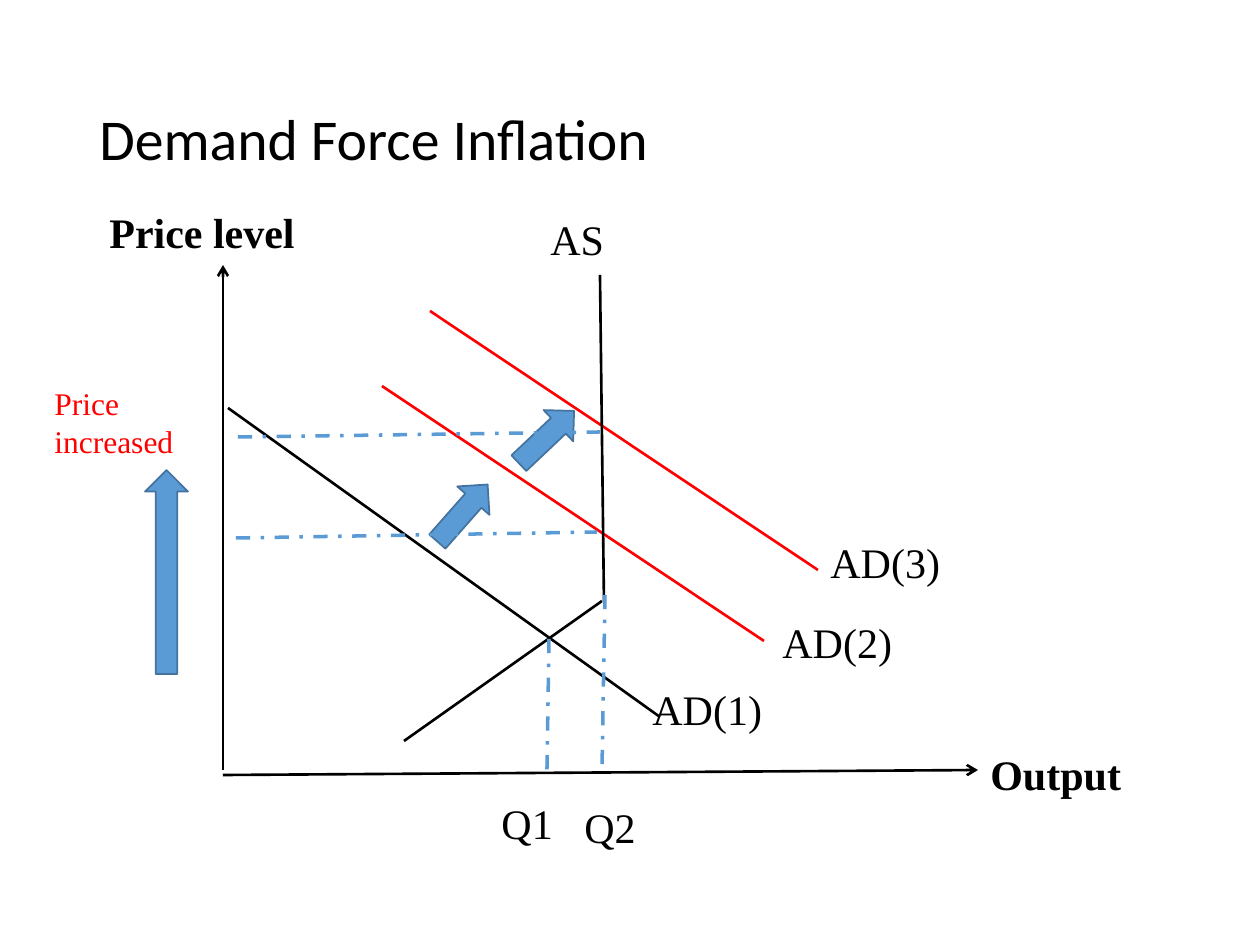
from lxml import etree
from pptx import Presentation
from pptx.dml.color import RGBColor
from pptx.enum.dml import MSO_LINE
from pptx.enum.shapes import MSO_CONNECTOR, MSO_SHAPE
from pptx.enum.text import MSO_ANCHOR
from pptx.oxml.ns import qn
from pptx.util import Emu, Pt

STRAIGHT = MSO_CONNECTOR.STRAIGHT
DOWN_ARROW = MSO_SHAPE.DOWN_ARROW
DASH_DOT = MSO_LINE.DASH_DOT
MIDDLE, TOP = MSO_ANCHOR.MIDDLE, MSO_ANCHOR.TOP
EMU_PER_PX = 914400 / 126
BLACK, RED, BLUE, DARK_BLUE = "000000", "FF0000", "5B9BD5", "43739E"

CURVES = [
    ((228, 408), (660, 717), BLACK),
    ((764, 641), (382, 386), RED),
    ((818, 570), (430, 311), RED),
    ((602, 601), (404, 741), BLACK),
    ((600, 275), (604, 601), BLACK),
]
GUIDES = [
    ((605, 595), (602, 770)),
    ((549, 639), (547, 770)),
    ((236, 538), (597, 532)),
    ((238, 437), (600, 432)),
]
LABELS = [
    ("AD(1)", (640, 677, 154, 64)),
    ("AD(2)", (770, 610, 154, 64)),
    ("AD(3)", (818, 530, 154, 64)),
    ("AS", (538, 207, 154, 64)),
    ("Q1", (489, 791, 97, 64)),
    ("Q2", (572, 795, 97, 64)),
]
SHIFT_ARROWS = [
    ((525, 399, 43, 76), 226.6),
    ((441, 475, 43, 76), 221.4),
    ((145, 470, 43, 204), 180),
]


def px(n):
    return Emu(round(n * EMU_PER_PX))


def color(value):
    return RGBColor.from_string(value)


def add_text(slide, text, box, size=24, font="Times New Roman", fill=BLACK,
             bold=False, anchor=TOP, spacing=None):
    tf = slide.shapes.add_textbox(*map(px, box)).text_frame
    tf.word_wrap = True
    tf.vertical_anchor = anchor
    for i, line in enumerate(text.split("\n")):
        p = tf.add_paragraph() if i else tf.paragraphs[0]
        p.line_spacing = spacing
        r = p.add_run()
        r.text = line
        r.font.size = Pt(size)
        r.font.name = font
        r.font.bold = bold
        r.font.color.rgb = color(fill)


def add_line(slide, start, end, fill=BLACK, width=1.5, dash=None, arrow=False):
    sp = slide.shapes.add_connector(STRAIGHT, *map(px, start + end))
    sp.line.color.rgb = color(fill)
    sp.line.width = Pt(width)
    if dash is not None:
        sp.line.dash_style = dash
    if arrow:
        etree.SubElement(sp.line._get_or_add_ln(), qn("a:tailEnd"), type="arrow")
    etree.SubElement(sp._element.spPr, qn("a:effectLst"))


def add_block_arrow(slide, box, rotation):
    sp = slide.shapes.add_shape(DOWN_ARROW, *map(px, box))
    sp.rotation = rotation
    sp.shadow.inherit = False
    sp.fill.solid()
    sp.fill.fore_color.rgb = color(BLUE)
    sp.line.color.rgb = color(DARK_BLUE)
    sp.line.width = Pt(1)


def main():
    prs = Presentation()
    prs.slide_width, prs.slide_height = px(1260), px(945)
    slide = prs.slides.add_slide(prs.slide_layouts[6])

    add_text(slide, "Demand Force Inflation", (87, 50, 1086, 183), size=33,
             font="Calibri", anchor=MIDDLE, spacing=0.9)
    add_line(slide, (223, 770), (223, 265), arrow=True)
    add_line(slide, (223, 775), (978, 770), arrow=True)
    for start, end, fill in CURVES:
        add_line(slide, start, end, fill)

    add_text(slide, "Price level", (97, 200, 307, 64), bold=True)
    add_text(slide, "Output", (978, 742, 179, 64), bold=True)
    for text, box in LABELS:
        add_text(slide, text, box)
    add_text(slide, "Price\nincreased", (42, 378, 171, 89), size=18, fill=RED)

    for box, rotation in SHIFT_ARROWS:
        add_block_arrow(slide, box, rotation)
    for start, end in GUIDES:
        add_line(slide, start, end, BLUE, width=2, dash=DASH_DOT)

    prs.save("out.pptx")


if __name__ == "__main__":
    main()
